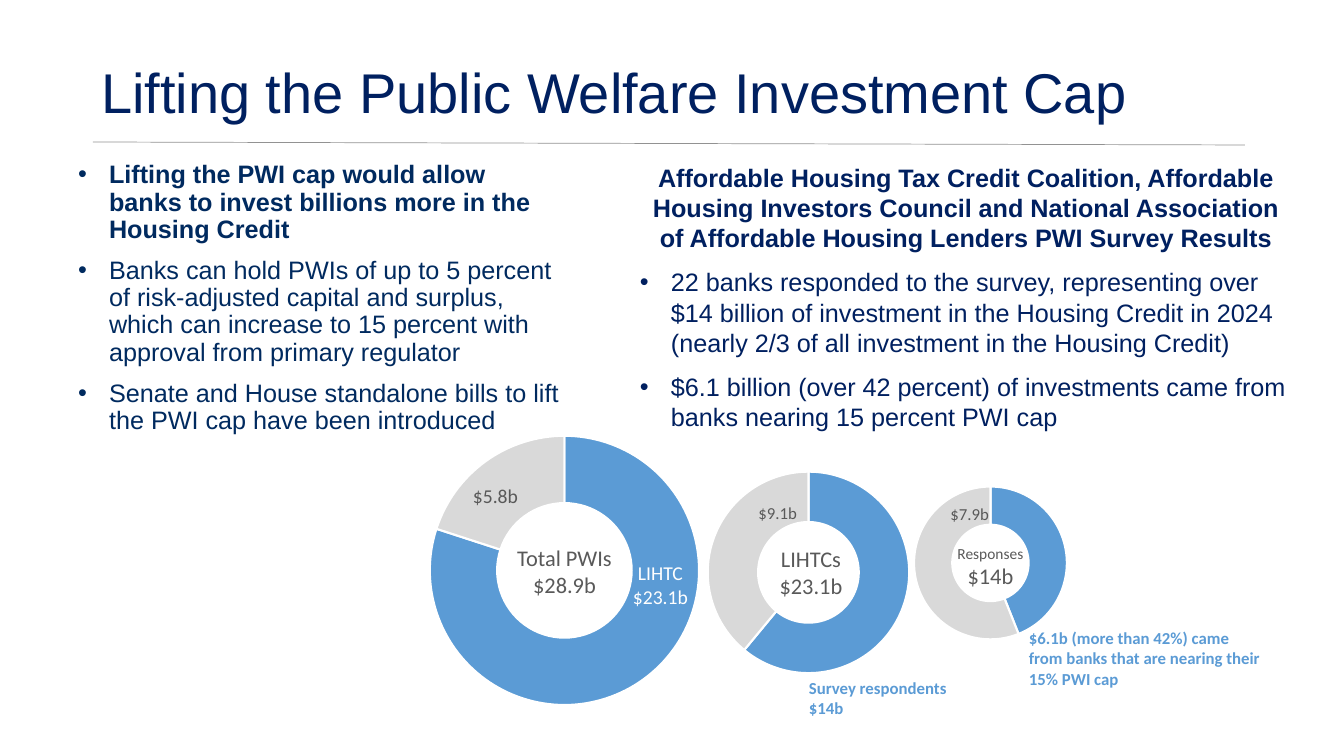
from lxml import etree
from pptx import Presentation
from pptx.chart.data import CategoryChartData
from pptx.dml.color import RGBColor
from pptx.enum.chart import XL_CHART_TYPE
from pptx.enum.shapes import MSO_CONNECTOR
from pptx.enum.text import MSO_ANCHOR, MSO_AUTO_SIZE, PP_ALIGN
from pptx.oxml import parse_xml
from pptx.oxml.ns import qn
from pptx.util import Pt

LEFT, CENTER, RIGHT = PP_ALIGN.LEFT, PP_ALIGN.CENTER, PP_ALIGN.RIGHT
DOUGHNUT = XL_CHART_TYPE.DOUGHNUT
CHART_NAMESPACE = "http://schemas.openxmlformats.org/drawingml/2006/chart"
PX = 914400 / 100.8
BULLET_INDENT = 31
COLORS = {
    "title": "002060", "list": "002A5F", "rule": "929292", "blue": "5B9BD5",
    "gray": "D9D9D9", "label": "595959", "white": "FFFFFF", "black": "000000",
}


def px(*lengths):
    """Turn pixel lengths into EMU."""
    return [round(length * PX) for length in lengths]


def write_text(shape, box, text, size, color, font="Calibri", bold=(), align=LEFT,
               bullets=(), sizes=None, before=0, spacing=None, wrap=True,
               anchor=MSO_ANCHOR.TOP):
    """Place a shape and fill it, one paragraph per line of text.

    bold and bullets hold paragraph numbers; sizes overrides size by paragraph number.
    """
    shape.left, shape.top, shape.width, shape.height = px(*box)
    frame = shape.text_frame
    frame.word_wrap = wrap
    frame.auto_size = MSO_AUTO_SIZE.NONE
    frame.vertical_anchor = anchor
    for number, line in enumerate(text.split("\n")):
        paragraph = frame.paragraphs[0] if number == 0 else frame.add_paragraph()
        paragraph.alignment = align
        paragraph.space_before = Pt(before if number else 0)
        if spacing:
            paragraph.line_spacing = spacing
        if number in bullets:
            paragraph.alignment = LEFT
            properties = paragraph._p.get_or_add_pPr()
            indent = px(BULLET_INDENT)[0]
            properties.set("marL", str(indent))
            properties.set("indent", str(-indent))
            etree.SubElement(properties, qn("a:buFont")).set("typeface", "Arial")
            etree.SubElement(properties, qn("a:buChar")).set("char", "•")
        run = paragraph.add_run()
        run.text = line
        run.font.name = font
        run.font.size = Pt((sizes or {}).get(number, size))
        run.font.bold = number in bold
        run.font.color.rgb = RGBColor.from_string(COLORS[color])


presentation = Presentation()
presentation.slide_width, presentation.slide_height = px(1344, 756)
slide = presentation.slides.add_slide(presentation.slide_layouts[1])
shapes = slide.shapes

# Heading and rule
rule = shapes.add_connector(MSO_CONNECTOR.STRAIGHT, *px(93, 142, 1245, 145))
rule.line.color.rgb = RGBColor.from_string(COLORS["rule"])
rule.line.width = Pt(0.5)
etree.SubElement(rule._element.spPr, qn("a:effectLst"))
write_text(shapes.title, (91, 51, 1125, 80), "Lifting the Public Welfare Investment Cap",
           40, "title", font="Arial", anchor=MSO_ANCHOR.MIDDLE)

# Left list
write_text(
    slide.placeholders[1], (68, 157, 505, 522),
    "Lifting the PWI cap would allow banks to invest billions more in the Housing Credit\n"
    "Banks can hold PWIs of up to 5 percent of risk-adjusted capital and surplus, "
    "which can increase to 15 percent with approval from primary regulator\n"
    "Senate and House standalone bills to lift the PWI cap have been introduced",
    18, "list", font="Arial", bold=(0,), bullets=(0, 1, 2), before=10, spacing=0.9)

# Doughnuts: frame, ring diameter, blue and gray shares
doughnuts = [
    ((284, 420, 561, 301), 272, (80, 20)),
    ((694, 455, 229, 235), 201, (61, 39)),
    ((876, 472, 229, 182), 153, (44, 56)),
]
for frame, diameter, shares in doughnuts:
    chart_data = CategoryChartData()
    chart_data.categories = ["1", "2"]
    chart_data.add_series("Series 1", shares)
    chart = shapes.add_chart(DOUGHNUT, *px(*frame), chart_data).chart
    chart.has_legend = False
    chart.has_title = False
    chart.font.name = "Calibri"
    chart.font.size = Pt(10)
    chart.font.color.rgb = RGBColor.from_string(COLORS["black"])
    plot = chart.plots[0]
    plot.vary_by_categories = True
    for number, color in enumerate(("blue", "gray")):
        slice_format = plot.series[0].points[number].format
        slice_format.fill.solid()
        slice_format.fill.fore_color.rgb = RGBColor.from_string(COLORS[color])
        slice_format.line.color.rgb = RGBColor.from_string(COLORS["white"])
        slice_format.line.width = Pt(1.5)

    # Centre the ring in its frame
    width, height = (round(diameter / side, 2) for side in frame[2:])
    sizes = {"x": (1 - width) / 2, "y": (1 - height) / 2, "w": width, "h": height}
    values = "".join(f'<c:{key} val="{value:.3f}"/>' for key, value in sizes.items())
    layout = parse_xml(
        f'<c:layout xmlns:c="{CHART_NAMESPACE}"><c:manualLayout>'
        '<c:layoutTarget val="inner"/><c:xMode val="edge"/><c:yMode val="edge"/>'
        f"{values}</c:manualLayout></c:layout>")
    plot_area = chart._chartSpace.chart.plotArea
    for old_layout in plot_area.findall(qn("c:layout")):
        plot_area.remove(old_layout)
    plot_area.insert(0, layout)

# Doughnut labels
centered = {"align": CENTER, "wrap": False}
labels = [
    ((502, 539, 125, 65), "Total PWIs\n$28.9b", 16, "label", centered),
    ((619, 556, 83, 57), "LIHTC\n$23.1b", 14, "white", centered),
    ((460, 479, 71, 34), "$5.8b", 14, "label", centered),
    ((765, 540, 92, 65), "LIHTCs\n$23.1b", 16, "label", centered),
    ((799, 673, 175, 50), "Survey respondents\n$14b", 12, "blue", {"bold": (0, 1)}),
    ((677, 498, 130, 30), "$9.1b", 12, "label", {"align": RIGHT}),
    ((943, 539, 95, 56), "Responses\n$14b", 16, "label", {**centered, "sizes": {0: 11}}),
    ((1019, 623, 257, 92),
     "$6.1b (more than 42%) came from banks that are nearing their 15% PWI cap",
     12, "blue", {"bold": (0,)}),
    ((930, 499, 69, 30), "$7.9b", 12, "label", {"align": RIGHT}),
]
for box, text, size, color, options in labels:
    write_text(shapes.add_textbox(*px(*box)), box, text, size, color, **options)

# Survey results
survey_box = (630, 157, 672, 282)
write_text(
    shapes.add_textbox(*px(*survey_box)), survey_box,
    "Affordable Housing Tax Credit Coalition, Affordable Housing Investors Council and "
    "National Association of Affordable Housing Lenders PWI Survey Results\n"
    "22 banks responded to the survey, representing over $14 billion of investment in the "
    "Housing Credit in 2024 (nearly 2/3 of all investment in the Housing Credit)\n"
    "$6.1 billion (over 42 percent) of investments came from banks nearing 15 percent PWI cap",
    18, "title", font="Arial", bold=(0,), align=CENTER, bullets=(1, 2), before=10)

presentation.save("out.pptx")
